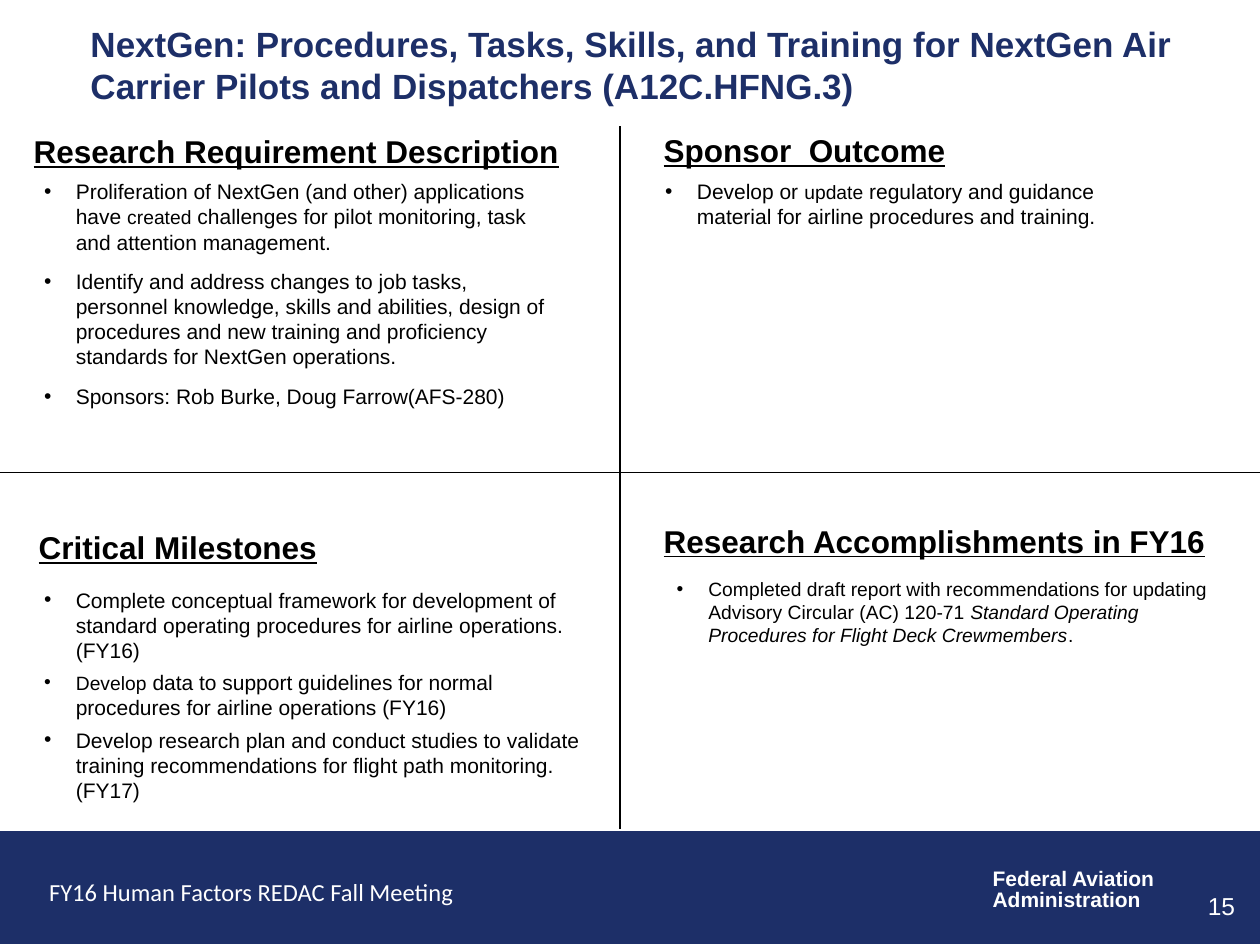
import pptx
import pptx.util
import pptx.dml.color
import pptx.enum.shapes
import pptx.enum.text
import pptx.oxml.ns
import lxml.etree

Cm, Pt = pptx.util.Cm, pptx.util.Pt
NAVY, BLACK, WHITE = "1D2F68", "000000", "FFFFFF"
WIDE, HIGH = 25.4, 19.05
MID_X, MID_Y, FOOT_Y = 12.5, 9.53, 16.76


def paint(target, color):
    target.rgb = pptx.dml.color.RGBColor.from_string(color)


def style(font, size, color, bold=False, name="Arial"):
    font.name, font.size, font.bold = name, Pt(size), bold
    paint(font.color, color)


def put(shape, left, top, width, height):
    shape.left, shape.top = Cm(left), Cm(top)
    shape.width, shape.height = Cm(width), Cm(height)


def write(slide, left, top, width, height, text, size, color,
          bold=False, name="Arial", wrap=True):
    box = slide.shapes.add_textbox(Cm(left), Cm(top), Cm(width), Cm(height))
    frame = box.text_frame
    frame.word_wrap = wrap
    frame.text = text
    for para in frame.paragraphs:
        for run in para.runs:
            style(run.font, size, color, bold, name)
    return frame


def rule(slide, x1, y1, x2, y2):
    line = slide.shapes.add_connector(
        pptx.enum.shapes.MSO_CONNECTOR.STRAIGHT, Cm(x1), Cm(y1), Cm(x2), Cm(y2))
    paint(line.line.color, BLACK)
    line.line.width = Pt(0.75)
    lxml.etree.SubElement(line._element.spPr, pptx.oxml.ns.qn("a:effectLst"))


def bullet(para):
    props = para._p.get_or_add_pPr()
    props.set("marL", str(Cm(0.64)))
    props.set("indent", str(-Cm(0.64)))
    font = lxml.etree.SubElement(props, pptx.oxml.ns.qn("a:buFont"))
    font.set("typeface", "Arial")
    mark = lxml.etree.SubElement(props, pptx.oxml.ns.qn("a:buChar"))
    mark.set("char", "•")


def title(slide, box, text):
    shape = slide.shapes.title
    put(shape, *box)
    frame = shape.text_frame
    frame.text = text
    frame.word_wrap = True
    frame.auto_size = pptx.enum.text.MSO_AUTO_SIZE.NONE
    frame.vertical_anchor = pptx.enum.text.MSO_ANCHOR.TOP
    para = frame.paragraphs[0]
    para.alignment = pptx.enum.text.PP_ALIGN.LEFT
    style(para.runs[0].font, 20, NAVY, True)


def panel(slide, origin, head, head_box, body_box, items, before=0, after=0):
    x, y = origin
    left, top, width, height = head_box
    frame = write(slide, x + left, y + top, width, height, head, 18, BLACK, True)
    frame.paragraphs[0].runs[0].font.underline = True
    left, top, width, height = body_box
    frame = write(slide, x + left, y + top, width, height, "", 12, BLACK)
    for i, item in enumerate(items):
        para = frame.add_paragraph() if i else frame.paragraphs[0]
        bullet(para)
        para.space_before = Pt(before if i else 0)
        para.space_after = Pt(after)
        for text, size, slant in item:
            run = para.add_run()
            run.text = text
            style(run.font, size, BLACK)
            run.font.italic = slant


def footer(slide, box):
    x, y, width, height = box
    bar = slide.shapes.add_shape(
        pptx.enum.shapes.MSO_SHAPE.RECTANGLE, Cm(x), Cm(y), Cm(width), Cm(height))
    bar.shadow.inherit = False
    bar.fill.solid()
    paint(bar.fill.fore_color, NAVY)
    paint(bar.line.color, NAVY)
    bar.line.width = Pt(0.75)
    frame = write(slide, x + 19.76, y + 0.64, 3.81, 1.12,
                  "Federal Aviation\nAdministration", 12, WHITE, True, wrap=False)
    for para in frame.paragraphs:
        para.line_spacing = 0.85
    frame = write(slide, x + 19.23, y + 1.07, 5.92, 0.91, "15", 14, WHITE)
    frame.paragraphs[0].alignment = pptx.enum.text.PP_ALIGN.RIGHT
    write(slide, x + 0.74, y + 0.79, 8.74, 0.86,
          "FY16 Human Factors REDAC Fall Meeting", 14, WHITE,
          name="Calibri", wrap=False)


def main():
    deck = pptx.Presentation()
    deck.slide_width, deck.slide_height = Cm(WIDE), Cm(HIGH)
    slide = deck.slides.add_slide(deck.slide_layouts[5])
    footer(slide, (0, FOOT_Y, WIDE, 2.26))
    title(slide, (1.57, 0.33, 23.55, 1.78),
          "NextGen: Procedures, Tasks, Skills, and Training for NextGen Air "
          "Carrier Pilots and Dispatchers (A12C.HFNG.3)")
    rule(slide, MID_X, 2.54, MID_X, 16.71)
    rule(slide, 0, MID_Y, WIDE, MID_Y)

    panel(slide, (0, 2.54), "Research Requirement Description",
          (0.43, 0, 12.7, 0.84), (0.64, 0.94, 10.74, 5.74), [
              [("Proliferation of NextGen (and other) applications have ", 12, False),
               ("created", 11, False),
               (" challenges for pilot monitoring, task and attention "
                "management.", 12, False)],
              [("Identify and address changes to job tasks, personnel knowledge, "
                "skills and abilities, design of procedures and new training and "
                "proficiency standards for NextGen operations.", 12, False)],
              [("Sponsors: Rob Burke, Doug Farrow(AFS-280)", 12, False)],
          ], after=8)
    panel(slide, (MID_X, 2.54), "Sponsor  Outcome",
          (0.63, -0.03, 11.86, 0.84), (0.66, 0.94, 10.74, 1.27), [
              [("Develop or ", 12, False), ("update", 11, False),
               (" regulatory and guidance material for airline procedures "
                "and training.", 12, False)],
          ], after=8)
    panel(slide, (0, MID_Y), "Critical Milestones",
          (0.53, 0.99, 11.43, 0.97), (0.64, 2.18, 11.38, 4.65), [
              [("Complete conceptual framework for development of standard "
                "operating procedures for airline operations. (FY16)", 12, False)],
              [("Develop", 11, False),
               (" data to support guidelines for normal procedures for airline "
                "operations (FY16)", 12, False)],
              [("Develop research plan and conduct studies to validate training "
                "recommendations for flight path monitoring. (FY17)", 12, False)],
          ], before=4)
    panel(slide, (MID_X, MID_Y), "Research Accomplishments in FY16",
          (0.63, 0.86, 11.48, 1.37), (0.89, 1.98, 11.23, 1.68), [
              [("Completed draft report with recommendations for updating "
                "Advisory Circular (AC) 120-71 ", 11, False),
               ("Standard Operating Procedures for Flight Deck Crewmembers",
                11, True),
               (".", 11, False)],
          ], before=4)
    deck.save("out.pptx")


if __name__ == "__main__":
    main()
